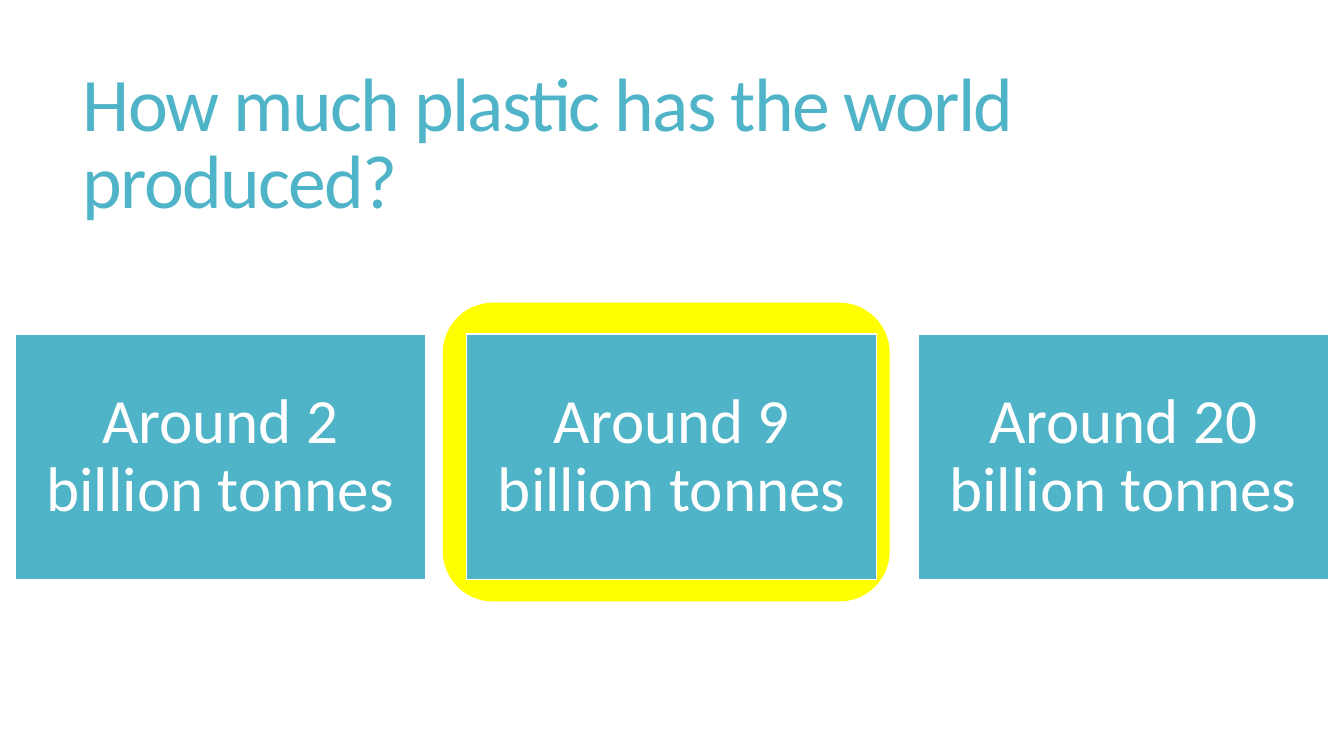
from pptx import Presentation
from pptx.dml.color import RGBColor
from pptx.enum.shapes import MSO_SHAPE
from pptx.enum.text import MSO_ANCHOR, MSO_AUTO_SIZE, PP_ALIGN
from pptx.oxml.ns import qn
from pptx.util import Pt

COLORS = {"teal": "50B4C8", "yellow": "FFFF00", "white": "FFFFFF"}
FONT = "Calibri"
ANSWERS = ["Around 2 billion tonnes", "Around 9 billion tonnes", "Around 20 billion tonnes"]

ANSWER_LEFT, ANSWER_TOP = 10.8, 238.5
ANSWER_WIDTH, ANSWER_HEIGHT = 293, 175.5
ANSWER_PITCH = 322.5
ANSWER_INSET = 13.5


def color(name):
    return RGBColor.from_string(COLORS[name])


def write_text(shape, text, size, color_name, alignment, line_spacing):
    frame = shape.text_frame
    frame.word_wrap = True
    frame.auto_size = MSO_AUTO_SIZE.NONE
    frame.vertical_anchor = MSO_ANCHOR.MIDDLE
    frame.text = text
    para = frame.paragraphs[0]
    para.alignment = alignment
    para.line_spacing = line_spacing
    para.font.name = FONT
    para.font.size = Pt(size)
    para.font.color.rgb = color(color_name)


def add_title(slide, text):
    title = slide.shapes.title
    title.left, title.top, title.width, title.height = Pt(51.8), Pt(39.6), Pt(848.2), Pt(130.3)
    write_text(title, text, 54, "teal", PP_ALIGN.LEFT, 0.85)
    for properties in title.element.iter(qn("a:defRPr")):
        properties.set("spc", "-120")


def add_block(slide, kind, left, top, width, height, fill, line):
    block = slide.shapes.add_shape(kind, Pt(left), Pt(top), Pt(width), Pt(height))
    block.shadow.inherit = False
    block.fill.solid()
    block.fill.fore_color.rgb = color(fill)
    block.line.color.rgb = color(line)
    block.line.width = Pt(1)
    return block


def add_answer(slide, index, text):
    left = ANSWER_LEFT + index * ANSWER_PITCH
    answer = add_block(slide, MSO_SHAPE.RECTANGLE, left, ANSWER_TOP,
                       ANSWER_WIDTH, ANSWER_HEIGHT, "teal", "white")
    frame = answer.text_frame
    frame.margin_left = frame.margin_right = Pt(ANSWER_INSET)
    frame.margin_top = frame.margin_bottom = Pt(ANSWER_INSET)
    write_text(answer, text, 45, "white", PP_ALIGN.CENTER, 0.9)


def main():
    deck = Presentation()
    deck.slide_width, deck.slide_height = Pt(960), Pt(540)
    slide = deck.slides.add_slide(deck.slide_layouts[5])
    add_title(slide, "How much plastic has the world produced?")
    add_block(slide, MSO_SHAPE.ROUNDED_RECTANGLE, 316.8, 216.7, 318.2, 212.4, "yellow", "yellow")
    for index, text in enumerate(ANSWERS):
        add_answer(slide, index, text)
    deck.save("out.pptx")


if __name__ == "__main__":
    main()
